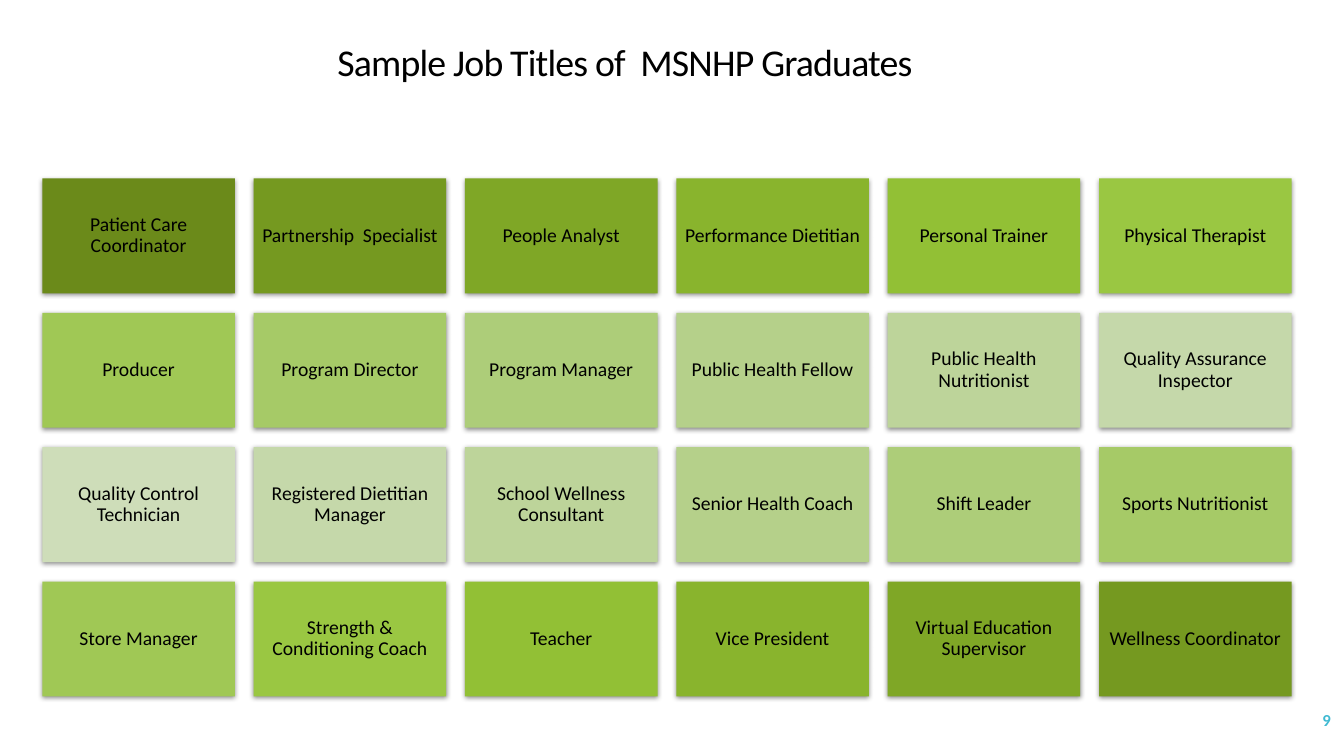
from lxml import etree
from pptx import Presentation
from pptx import util as u
from pptx.dml.color import RGBColor
from pptx.enum import shapes, text
from pptx.oxml import ns

FONT = "Calibri"
BLACK = RGBColor(0x00, 0x00, 0x00)
TEAL = RGBColor(0x40, 0xBA, 0xD2)

# Greens from dark to pale; the grid runs down this ramp and back up
GREENS = [RGBColor.from_string(code) for code in (
    "6B8A1A", "759920", "7FA726", "89B42D", "92C035", "9AC742", "A0C855",
    "A6CA67", "ADCD79", "B5D08A", "BDD49A", "C5D8AA", "CEDDB9")]

JOBS = [
    "Patient Care Coordinator", "Partnership  Specialist", "People Analyst",
    "Performance Dietitian", "Personal Trainer", "Physical Therapist",
    "Producer", "Program Director", "Program Manager",
    "Public Health Fellow", "Public Health Nutritionist",
    "Quality Assurance Inspector",
    "Quality Control Technician", "Registered Dietitian Manager",
    "School Wellness Consultant", "Senior Health Coach", "Shift Leader",
    "Sports Nutritionist",
    "Store Manager", "Strength & Conditioning Coach", "Teacher",
    "Vice President", "Virtual Education Supervisor", "Wellness Coordinator",
]

# Grid of job cards, in inches
COLS, ROWS = 6, 4
LEFT, TOP = 0.42, 1.77
WIDE, HIGH = 1.91, 1.14
STEP_X = (10.9 - LEFT) / (COLS - 1)
STEP_Y = (5.77 - TOP) / (ROWS - 1)


class Page:
    """Holds the style and the current slide."""

    def __init__(self, deck):
        self.slide = deck.slides.add_slide(deck.slide_layouts[5])
        self.font = FONT

    def label(self, shape, words, size, color=BLACK, bold=False,
              align=text.PP_ALIGN.CENTER, inset=None):
        frame = shape.text_frame
        frame.word_wrap = True
        frame.auto_size = text.MSO_AUTO_SIZE.NONE
        frame.vertical_anchor = text.MSO_ANCHOR.MIDDLE
        if inset is not None:
            frame.margin_left = frame.margin_right = u.Inches(inset)
            frame.margin_top = frame.margin_bottom = u.Inches(inset)
        para = frame.paragraphs[0]
        para.alignment = align
        para.line_spacing = 0.9
        run = para.add_run()
        run.text = words
        run.font.name = self.font
        run.font.size = u.Pt(size)
        run.font.bold = bold
        run.font.color.rgb = color
        return run

    def title(self, words, x, y, w, h):
        box = self.slide.shapes.title
        box.left, box.top = u.Inches(x), u.Inches(y)
        box.width, box.height = u.Inches(w), u.Inches(h)
        run = self.label(box, words, 27)
        run.font._element.set("spc", "-60")

    def shade(self, shape):
        shape.shadow.inherit = False
        effects = shape._element.spPr.find(ns.qn("a:effectLst"))
        outer = etree.SubElement(
            effects, ns.qn("a:outerShdw"), blurRad=str(u.Pt(3.5)),
            dist=str(u.Pt(1.1)), dir="5400000", algn="ctr", rotWithShape="0")
        tint = etree.SubElement(outer, ns.qn("a:srgbClr"), val=str(BLACK))
        etree.SubElement(tint, ns.qn("a:alpha"), val="45000")

    def card(self, words, x, y, fill):
        card = self.slide.shapes.add_shape(
            shapes.MSO_SHAPE.RECTANGLE, u.Inches(x), u.Inches(y),
            u.Inches(WIDE), u.Inches(HIGH))
        card.fill.solid()
        card.fill.fore_color.rgb = fill
        card.line.fill.background()
        self.shade(card)
        self.label(card, words, 14, inset=0.06)

    def number(self, words, x, y, w, h):
        box = self.slide.shapes.add_textbox(
            u.Inches(x), u.Inches(y), u.Inches(w), u.Inches(h))
        self.label(box, words, 12, TEAL, True, text.PP_ALIGN.RIGHT)


def main():
    deck = Presentation()
    deck.slide_width, deck.slide_height = u.Inches(13.33), u.Inches(7.5)
    page = Page(deck)

    # Page number and title
    page.number("9", 11.63, 6.95, 1.67, 0.4)
    page.title("Sample Job Titles of  MSNHP Graduates", 0, 0.4, 12.39, 0.47)

    # Job cards
    last = len(GREENS) - 1
    for i, job in enumerate(JOBS):
        row, col = divmod(i, COLS)
        fill = GREENS[last - abs(last - i)]
        page.card(job, LEFT + col * STEP_X, TOP + row * STEP_Y, fill)

    deck.save("out.pptx")


if __name__ == "__main__":
    main()
